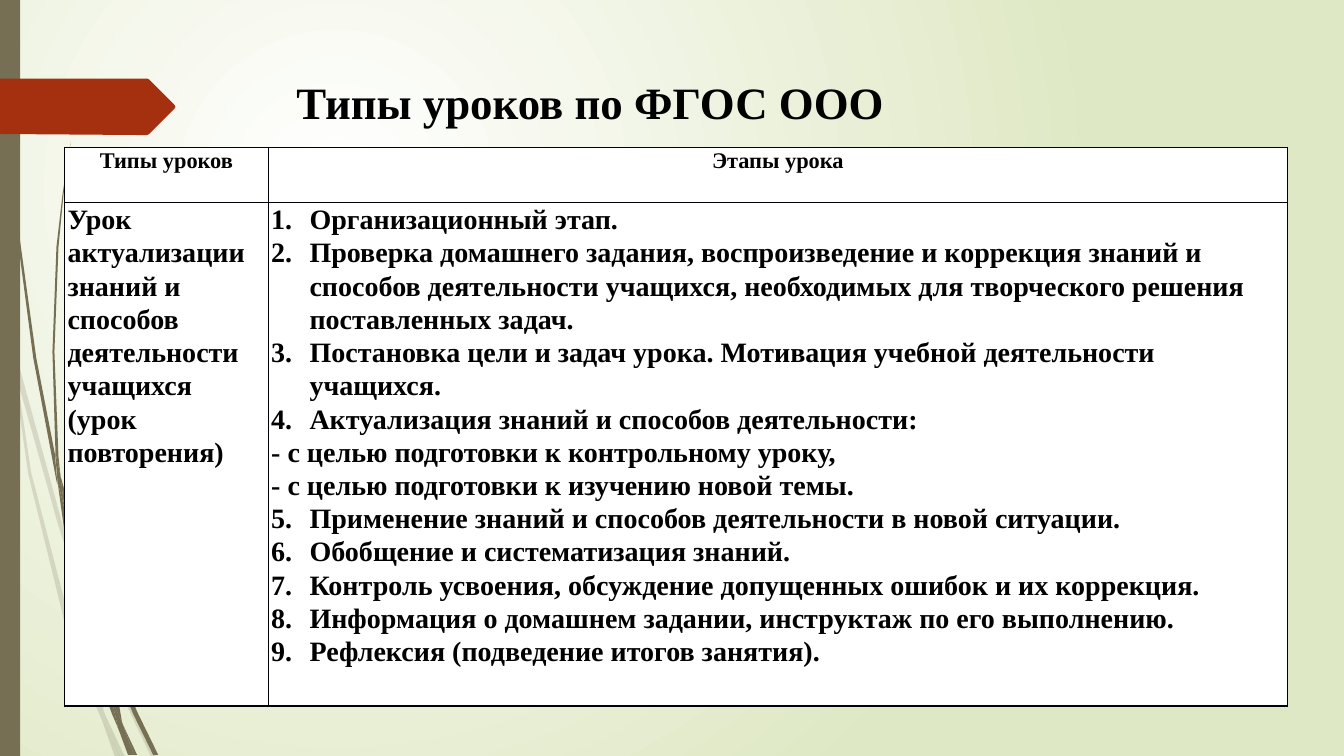
import dataclasses

import lxml.etree
import pptx
import pptx.dml.color
import pptx.enum.shapes
import pptx.enum.text
import pptx.oxml
import pptx.oxml.ns
import pptx.util

Inches = pptx.util.Inches
qn = pptx.oxml.ns.qn
CENTER = pptx.enum.text.PP_ALIGN.CENTER
LEFT = pptx.enum.text.PP_ALIGN.LEFT


@dataclasses.dataclass(frozen=True)
class Theme:
    font: str = "Times New Roman"
    title: int = 32
    header: int = 16
    body: int = 20
    text: str = "000000"
    border: str = "00000A"
    cell: str = "FFFFFF"
    glow: str = "FFFFFF"
    ground: str = "DFE8C4"
    stem: str = "766F54"
    arrow: str = "A53010"
    spacing: float = 1.07


THEME = Theme()

PALE_STEMS = [
    [(0.11, 3.5), (0.09, 3.22), (0, 2.82), (0, 2.99), (0.1, 3.44)],
    [(0.58, 5.22), (0.84, 5.99), (0.85, 5.86), (0.62, 5.2), (0.14, 3.45), (0.17, 3.76)],
    [(0.92, 6.07), (0.88, 5.96), (0.88, 6.1), (1.23, 6.94), (1.5, 7.51), (1.55, 7.51),
     (1.27, 6.92)],
    [(1.19, 7.51), (1.24, 7.51), (1.05, 7.11)],
    [(0.93, 6.83), (0.7, 6.19), (0.31, 4.69), (0.17, 3.76), (0.11, 3.5), (0.28, 4.7),
     (0.65, 6.21), (0.92, 6.93), (1.01, 7.14), (0.99, 7.07)],
    [(0.84, 5.99), (0.87, 6.46), (0.93, 6.83), (0.96, 6.92), (1.05, 7.11), (1.03, 7.06),
     (0.91, 6.46), (0.88, 6.1), (0.88, 6.08)],
    [(0.88, 5.84), (1.1, 4.62), (1.6, 3.49), (2.29, 2.45), (2.68, 1.98), (2.9, 1.75),
     (3.12, 1.54), (3.12, 1.53), (2.89, 1.75), (2.68, 1.97), (2.28, 2.44), (1.58, 3.48),
     (1.07, 4.61), (0.85, 5.84), (0.85, 5.86), (0.88, 5.96)],
    [(1.01, 7.14), (1.14, 7.51), (1.19, 7.51)],
    [(0.88, 6.08), (0.88, 6.1), (0.88, 5.96), (0.85, 5.86), (0.84, 5.99)],
    [(0.96, 6.92), (0.93, 6.83), (0.99, 7.07), (1.01, 7.14), (1.19, 7.51), (1.05, 7.11)],
]

DARK_STEMS = [
    [(0.07, 1.1), (0.17, 2.33), (0.33, 3.55), (0.56, 4.77), (0.57, 4.81), (0.55, 4.57),
     (0.55, 4.53), (0.36, 3.55), (0.19, 2.32), (0.08, 1.09), (0.05, 0.48), (0.04, 0),
     (0.03, 0), (0.04, 0.48)],
    [(0.88, 5.92), (1.06, 6.45), (1.06, 6.33), (1.06, 6.31), (0.93, 5.9), (0.6, 4.72),
     (0.64, 5.05)],
    [(1.13, 6.49), (1.1, 6.41), (1.11, 6.56), (1.32, 7.08), (1.52, 7.49), (1.57, 7.49),
     (1.36, 7.06)],
    [(1.1, 6.91), (0.98, 6.57), (0.72, 5.56), (0.64, 5.05), (0.57, 4.77), (0.68, 5.57),
     (0.93, 6.59), (1.11, 7.08), (1.17, 7.22), (1.16, 7.17)],
    [(0.6, 4.72), (0.58, 4.53), (0.54, 3.49), (0.58, 2.45), (0.63, 1.93), (0.7, 1.41),
     (0.62, 1.93), (0.56, 2.45), (0.52, 3.49), (0.55, 4.49)],
    [(1.33, 7.49), (1.36, 7.49), (1.22, 7.19)],
    [(0.57, 4.77), (0.64, 5.05), (0.6, 4.72), (0.55, 4.49), (0.55, 4.53)],
    [(1.11, 6.33), (1.25, 5.52), (1.58, 4.76), (2.05, 4.06), (2.31, 3.74), (2.45, 3.59),
     (2.61, 3.44), (2.6, 3.44), (2.45, 3.58), (2.31, 3.73), (2.04, 4.05), (1.56, 4.74),
     (1.22, 5.51), (1.06, 6.31), (1.1, 6.41)],
    [(1.17, 7.22), (1.27, 7.49), (1.31, 7.49)],
    [(1.06, 6.45), (1.1, 6.91), (1.16, 7.06), (1.22, 7.19), (1.21, 7.16), (1.11, 6.56),
     (1.09, 6.51)],
    [(1.06, 6.45), (1.09, 6.51), (1.11, 6.56), (1.1, 6.41), (1.06, 6.31), (1.06, 6.33)],
    [(1.16, 7.06), (1.1, 6.91), (1.16, 7.17), (1.17, 7.22), (1.3, 7.49), (1.33, 7.49),
     (1.22, 7.19)],
]

ARROW = [(0, 0.78), (1.46, 0.78), (1.48, 0.79), (1.73, 1.04), (1.74, 1.06), (1.73, 1.08),
         (1.48, 1.33), (1.46, 1.34), (1.36, 1.34), (0, 1.33)]

TITLE = "Типы уроков по ФГОС ООО"
HEADERS = ["Типы уроков", "Этапы урока"]
LESSON_TYPE = "Урок актуализации знаний и способов деятельности учащихся (урок повторения)"
FIRST_STAGES = [
    "Организационный этап.",
    "Проверка домашнего задания, воспроизведение и коррекция знаний и способов деятельности "
    "учащихся, необходимых для творческого решения поставленных задач.",
    "Постановка цели и задач урока. Мотивация учебной деятельности учащихся.",
    "Актуализация знаний и способов деятельности:",
]
GOALS = [
    "- с целью подготовки к контрольному уроку,",
    "- с целью подготовки к изучению новой темы.",
]
LAST_STAGES = [
    "Применение знаний и способов деятельности в новой ситуации.",
    "Обобщение и систематизация знаний.",
    "Контроль усвоения, обсуждение допущенных ошибок и их коррекция.",
    "Информация о домашнем задании, инструктаж по его выполнению.",
    "Рефлексия (подведение итогов занятия).",
]


def rgb(color):
    return pptx.dml.color.RGBColor.from_string(color)


def set_background(page):
    background = pptx.oxml.parse_xml(
        f'<p:bg {pptx.oxml.ns.nsdecls("p", "a")}><p:bgPr><a:gradFill rotWithShape="1"><a:gsLst>'
        f'<a:gs pos="0"><a:srgbClr val="{THEME.glow}"/></a:gs>'
        f'<a:gs pos="100000"><a:srgbClr val="{THEME.ground}"/></a:gs></a:gsLst>'
        '<a:path path="circle"><a:fillToRect l="50000" t="50000" r="100000" b="100000"/></a:path>'
        '</a:gradFill><a:effectLst/></p:bgPr></p:bg>')
    page.element.cSld.insert(0, background)


def paint(shape, color, opacity=100):
    shape.shadow.inherit = False
    shape.fill.solid()
    shape.fill.fore_color.rgb = rgb(color)
    shape.line.fill.background()
    if opacity < 100:
        tint = shape.fill._xPr.find(".//" + qn("a:srgbClr"))
        lxml.etree.SubElement(tint, qn("a:alpha"), val=str(opacity * 1000))


def add_outline(page, points, color, opacity=100):
    corners = [(Inches(x), Inches(y)) for x, y in points]
    builder = page.shapes.build_freeform(*corners[0])
    builder.add_line_segments(corners[1:], close=True)
    paint(builder.convert_to_shape(), color, opacity)


def style_font(para, size):
    para.font.name = THEME.font
    para.font.size = pptx.util.Pt(size)
    para.font.bold = True
    para.font.color.rgb = rgb(THEME.text)


def add_title(page):
    box = page.shapes.add_textbox(Inches(2.84), Inches(0.68), Inches(9.75), Inches(0.66))
    box.text_frame.word_wrap = True
    box.text_frame.vertical_anchor = pptx.enum.text.MSO_ANCHOR.MIDDLE
    para = box.text_frame.paragraphs[0]
    para.text = TITLE
    style_font(para, THEME.title)


def number(para, start):
    properties = para._p.get_or_add_pPr()
    properties.set("marL", str(Inches(0.38)))
    properties.set("indent", str(-Inches(0.38)))
    lxml.etree.SubElement(properties, qn("a:buAutoNum"), type="arabicPeriod", startAt=str(start))
    tabs = lxml.etree.SubElement(properties, qn("a:tabLst"))
    lxml.etree.SubElement(tabs, qn("a:tab"), pos=str(Inches(0.5)), algn="l")


def draw_borders(cell):
    properties = cell._tc.get_or_add_tcPr()
    for position, side in enumerate(("a:lnL", "a:lnR", "a:lnT", "a:lnB")):
        line = lxml.etree.Element(qn(side), w=str(pptx.util.Pt(1)))
        fill = lxml.etree.SubElement(line, qn("a:solidFill"))
        lxml.etree.SubElement(fill, qn("a:srgbClr"), val=THEME.border)
        properties.insert(position, line)


def fill_cell(cell, entries, size, align=LEFT):
    cell.margin_left = cell.margin_right = Inches(0.03)
    cell.margin_top = cell.margin_bottom = 0
    cell.fill.solid()
    cell.fill.fore_color.rgb = rgb(THEME.cell)
    draw_borders(cell)
    frame = cell.text_frame
    for index, (text, start) in enumerate(entries):
        para = frame.add_paragraph() if index else frame.paragraphs[0]
        para.text = text
        para.alignment = align
        para.line_spacing = THEME.spacing
        if start:
            number(para, start)
        style_font(para, size)


def add_lesson_table(page):
    frame = page.shapes.add_table(2, 2, Inches(0.64), Inches(1.46), Inches(12.13), Inches(4.95))
    table = frame.table
    table.first_row = table.horz_banding = False
    for column, width in zip(table.columns, (2.02, 10.11)):
        column.width = Inches(width)
    for row, height in zip(table.rows, (0.55, 4.4)):
        row.height = Inches(height)
    for column, header in enumerate(HEADERS):
        fill_cell(table.cell(0, column), [(header, None)], THEME.header, CENTER)
    stages = [(text, 1) for text in FIRST_STAGES]
    stages += [(text, None) for text in GOALS]
    stages += [(text, len(FIRST_STAGES) + 1) for text in LAST_STAGES]
    fill_cell(table.cell(1, 0), [(LESSON_TYPE, None)], THEME.body)
    fill_cell(table.cell(1, 1), stages, THEME.body)


def main():
    deck = pptx.Presentation()
    deck.slide_width, deck.slide_height = Inches(13.33), Inches(7.5)
    page = deck.slides.add_slide(deck.slide_layouts[6])
    set_background(page)
    for stem in PALE_STEMS:
        add_outline(page, stem, THEME.stem, 20)
    for stem in DARK_STEMS:
        add_outline(page, stem, THEME.stem)
    rectangle = pptx.enum.shapes.MSO_SHAPE.RECTANGLE
    paint(page.shapes.add_shape(rectangle, 0, 0, Inches(0.2), Inches(7.5)), THEME.stem)
    add_outline(page, ARROW, THEME.arrow)
    add_title(page)
    add_lesson_table(page)
    deck.save("out.pptx")


if __name__ == "__main__":
    main()
